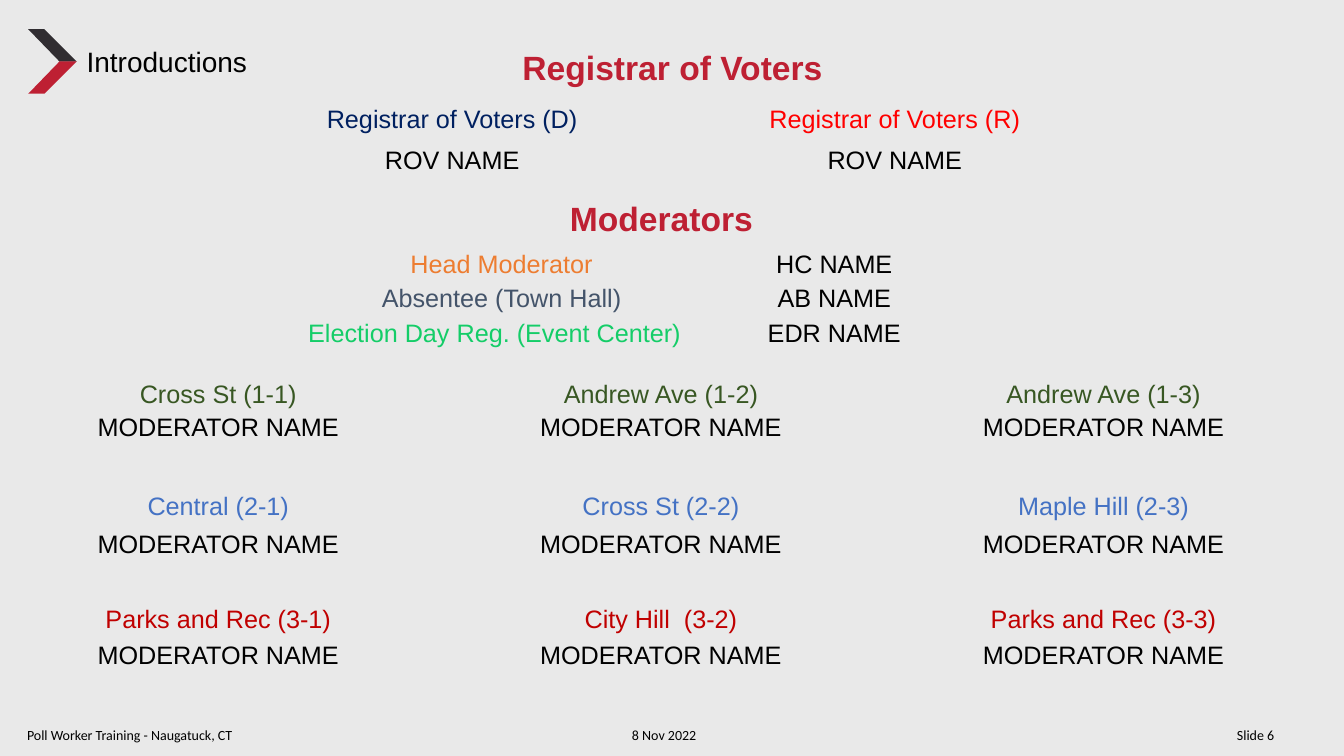
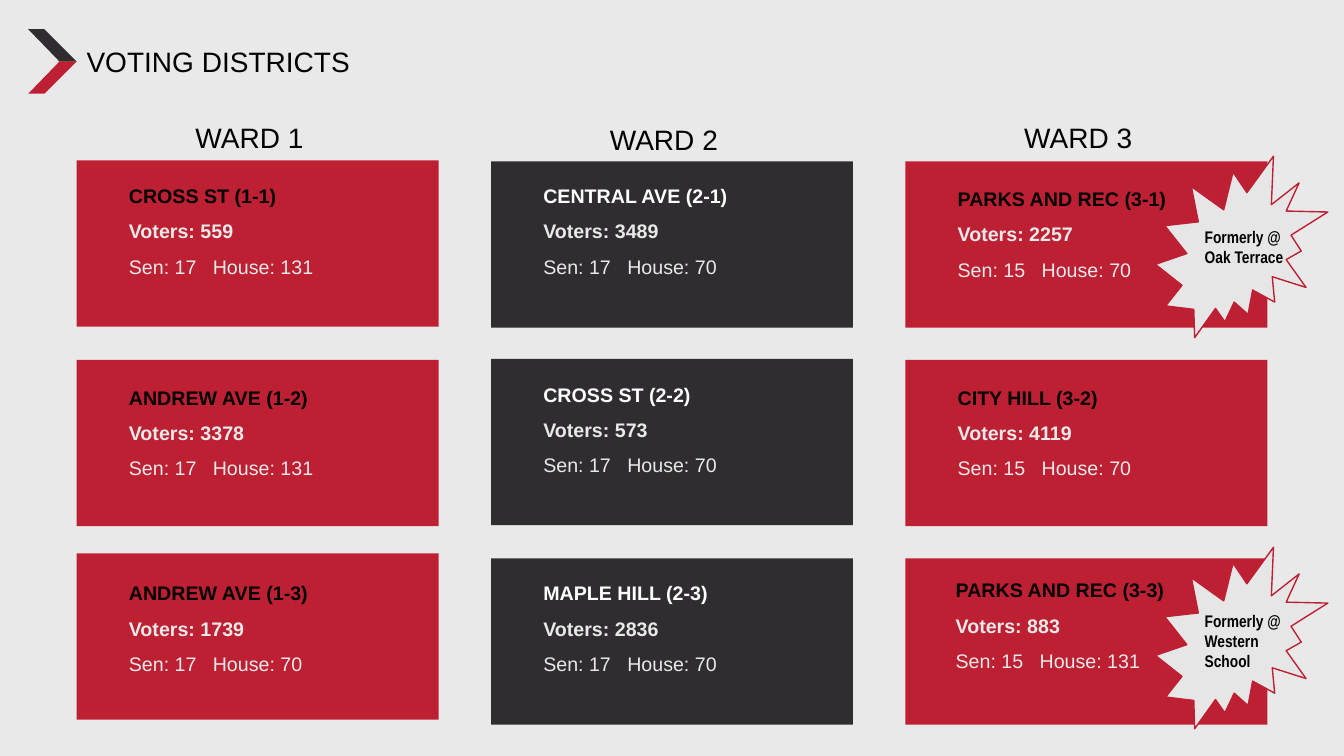
from dataclasses import dataclass
from typing import Optional

import lxml.etree
import pptx
import pptx.dml.color
import pptx.enum.shapes
import pptx.enum.text
import pptx.oxml.ns
import pptx.util

Inches = pptx.util.Inches
qn = pptx.oxml.ns.qn
SHAPES = pptx.enum.shapes.MSO_SHAPE
CENTER = pptx.enum.text.PP_ALIGN.CENTER

RED, DARK, PALE = "BE2033", "302D31", "E9E9E9"
BLACK, WHITE, SEAL = "000000", "FFFFFF", "E7E6E6"
GREEN_FADE = ("14CD68", "0B6E38")

# Introductions grid
NAME_LEFT, NAME_PITCH, NAME_WIDTH = 0.6, 4.39, 3.13
REGISTRAR_LEFT = 2.92
DISTRICT_TOP, DISTRICT_PITCH = 3.7, 1.12
# Voting districts grid
CARD_LEFT, CARD_PITCH_X, CARD_WIDTH = 0.76, 4.11, 3.59
CARD_TOP, CARD_PITCH_Y, CARD_HEIGHT = 1.6, 1.97, 1.65


@dataclass(frozen=True)
class Box:
    left: float
    top: float
    width: float
    height: float = 0.4

    def emu(self) -> list:
        return [Inches(v) for v in (self.left, self.top, self.width, self.height)]


@dataclass(frozen=True)
class Line:
    text: str
    size: float = 18
    color: str = BLACK
    bold: bool = False
    font: str = "Arial"
    spacing: Optional[float] = None
    fade: Optional[tuple] = None


@dataclass(frozen=True)
class DistrictRow:
    color: str
    name_gap: float
    places: tuple


@dataclass(frozen=True)
class Card:
    """One district; the shifts move the box or its text off the grid."""
    place: str
    voters: int
    senate: int
    house: int
    box_shift: float = 0
    text_shift: float = 0
    left_shift: float = 0


@dataclass(frozen=True)
class Ward:
    title: str
    title_top: float
    fill: str
    heading: str
    cards: tuple


@dataclass(frozen=True)
class Note:
    seal_top: float
    text_top: float
    text: str
    height: float


DISTRICT_ROWS = (
    DistrictRow("385723", 0.33, ("Cross St (1-1)", "Andrew Ave (1-2)", "Andrew Ave (1-3)")),
    DistrictRow("4472C4", 0.37, ("Central (2-1)", "Cross St (2-2)", "Maple Hill (2-3)")),
    DistrictRow("C00000", 0.35, ("Parks and Rec (3-1)", "City Hill  (3-2)", "Parks and Rec (3-3)")),
)
MODERATORS = (
    (Line("Head Moderator", color="ED7D31"), "HC NAME", Box(3.41, 2.41, 3.13)),
    (Line("Absentee (Town Hall)", color="44546A"), "AB NAME", Box(3.41, 2.75, 3.13)),
    (Line("Election Day Reg. (Event Center)", fade=GREEN_FADE), "EDR NAME", Box(2.92, 3.1, 3.97)),
)
WARDS = (
    Ward("WARD 1", 1.15, RED, BLACK, (
        Card("CROSS ST (1-1)", 559, 17, 131, box_shift=-0.01),
        Card("ANDREW AVE (1-2)", 3378, 17, 131, text_shift=0.03),
        Card("ANDREW AVE (1-3)", 1739, 17, 70, box_shift=-0.05))),
    Ward("WARD 2", 1.17, DARK, WHITE, (
        Card("CENTRAL AVE (2-1)", 3489, 17, 70),
        Card("CROSS ST (2-2)", 573, 17, 70, box_shift=-0.01),
        Card("MAPLE HILL (2-3)", 2836, 17, 70))),
    Ward("WARD 3", 1.15, RED, BLACK, (
        Card("PARKS AND REC (3-1)", 2257, 15, 70, text_shift=0.03),
        Card("CITY HILL (3-2)", 4119, 15, 70, text_shift=0.03),
        Card("PARKS AND REC (3-3)", 883, 15, 131, text_shift=-0.03, left_shift=-0.02))),
)
NOTES = (
    Note(1.55, 2.2, "Formerly @ Oak Terrace", 0.5),
    Note(5.43, 6.01, "Formerly @ Western School", 0.71),
)


def rgb(color: str):
    return pptx.dml.color.RGBColor.from_string(color)


def paint(sp, fill: str, line: Optional[str] = None) -> None:
    sp.shadow.inherit = False
    sp.fill.solid()
    sp.fill.fore_color.rgb = rgb(fill)
    if line:
        sp.line.color.rgb = rgb(line)
        sp.line.width = pptx.util.Pt(1)
    else:
        sp.line.fill.background()


def add_preset(s, kind, box: Box, fill: str, line: Optional[str] = None) -> None:
    paint(s.shapes.add_shape(kind, *box.emu()), fill, line)


def add_tabs(p, tabs: tuple) -> None:
    stops = lxml.etree.SubElement(p._p.get_or_add_pPr(), qn("a:tabLst"))
    for stop in tabs:
        lxml.etree.SubElement(stops, qn("a:tab"), pos=str(Inches(stop)), algn="l")


def add_text(s, box: Box, *lines: Line, align=None, tabs: tuple = ()) -> None:
    tf = s.shapes.add_textbox(*box.emu()).text_frame
    tf.word_wrap = True
    tf.auto_size = pptx.enum.text.MSO_AUTO_SIZE.SHAPE_TO_FIT_TEXT
    for i, line in enumerate(lines):
        p = tf.add_paragraph() if i else tf.paragraphs[0]
        if align is not None:
            p.alignment = align
        if line.spacing:
            p.line_spacing = line.spacing
        if tabs:
            add_tabs(p, tabs)
        r = p.add_run()
        r.text = line.text
        r.font.name = line.font
        r.font.size = pptx.util.Pt(line.size)
        r.font.bold = line.bold
        if line.fade:
            r.font.fill.gradient()
            r.font.fill.gradient_angle = 0
            for stop, color in zip(r.font.fill.gradient_stops, line.fade):
                stop.color.rgb = rgb(color)
        else:
            r.font.color.rgb = rgb(line.color)


def add_chevron(s) -> None:
    middle, half = 0.61, 0.32
    for edge, fill in ((middle - half, DARK), (middle + half, RED)):
        outline = ((0.28, edge), (0.44, edge), (0.76, middle), (0.59, middle))
        points = [(Inches(x), Inches(y)) for x, y in outline]
        fb = s.shapes.build_freeform(*points[0])
        fb.add_line_segments(points[1:], close=True)
        paint(fb.convert_to_shape(), fill)


def new_slide(prs, title: str):
    s = prs.slides.add_slide(prs.slide_layouts[6])
    add_chevron(s)
    add_text(s, Box(0.76, 0.39, 4.45, 0.44), Line(title, 20))
    return s


def introductions(prs) -> None:
    s = new_slide(prs, "Introductions")
    for heading, left, top in (("Registrar of Voters", 4.06, 0.34), ("Moderators", 3.95, 1.83)):
        add_text(s, Box(left, top, 5.22, 0.58),
                 Line(heading, 24, RED, True, spacing=1.2), align=CENTER)

    for col, (party, color) in enumerate((("D", "002060"), ("R", "FF0000"))):
        left = REGISTRAR_LEFT + col * NAME_PITCH
        add_text(s, Box(left, 0.98, NAME_WIDTH),
                 Line(f"Registrar of Voters ({party})", color=color), align=CENTER)
        add_text(s, Box(left, 1.38, NAME_WIDTH), Line("ROV NAME"), align=CENTER)

    for role, name, box in MODERATORS:
        add_text(s, box, role, align=CENTER)
        add_text(s, Box(6.71, box.top, NAME_WIDTH), Line(name), align=CENTER)

    for row, district in enumerate(DISTRICT_ROWS):
        top = DISTRICT_TOP + row * DISTRICT_PITCH
        for col, place in enumerate(district.places):
            left = NAME_LEFT + col * NAME_PITCH
            add_text(s, Box(left, top, NAME_WIDTH),
                     Line(place, color=district.color), align=CENTER)
            add_text(s, Box(left, top + district.name_gap, NAME_WIDTH),
                     Line("MODERATOR NAME"), align=CENTER)

    add_text(s, Box(0.17, 7.16, 12.8, 0.27),
             Line("Poll Worker Training - Naugatuck, CT\t8 Nov 2022\tSlide 6", 10, font="Calibri"),
             tabs=(6, 12))


def add_card(s, ward: Ward, card: Card, left: float, top: float) -> None:
    add_preset(s, SHAPES.RECTANGLE,
               Box(left, top + card.box_shift, CARD_WIDTH, CARD_HEIGHT), ward.fill)
    add_text(s, Box(left + 0.42 + card.left_shift, top + 0.06 + card.text_shift, 3, 1.16),
             Line(card.place, 14, ward.heading, True, spacing=1.5),
             Line(f"Voters: {card.voters}", 14, PALE, True, spacing=1.5),
             Line(f"Sen: {card.senate}   House: {card.house}", 14, PALE, spacing=1.5))


def voting_districts(prs) -> None:
    s = new_slide(prs, "VOTING DISTRICTS")
    for col, ward in enumerate(WARDS):
        left = CARD_LEFT + col * CARD_PITCH_X
        add_text(s, Box(left + 1.08, ward.title_top, 1.44, 0.44), Line(ward.title, 20))
        for row, card in enumerate(ward.cards):
            add_card(s, ward, card, left, CARD_TOP + row * CARD_PITCH_Y)
    for note in NOTES:
        add_preset(s, SHAPES.EXPLOSION2, Box(11.46, note.seal_top, 1.71, 1.8), SEAL, RED)
        add_text(s, Box(11.85, note.text_top, 1, note.height),
                 Line(note.text, 12, bold=True, font="Arial Narrow"))


def main() -> None:
    prs = pptx.Presentation()
    prs.slide_width, prs.slide_height = Inches(13.33), Inches(7.5)
    fill = prs.slide_master.background.fill
    fill.solid()
    fill.fore_color.rgb = rgb(PALE)
    introductions(prs)
    voting_districts(prs)
    prs.save("out.pptx")


if __name__ == "__main__":
    main()
